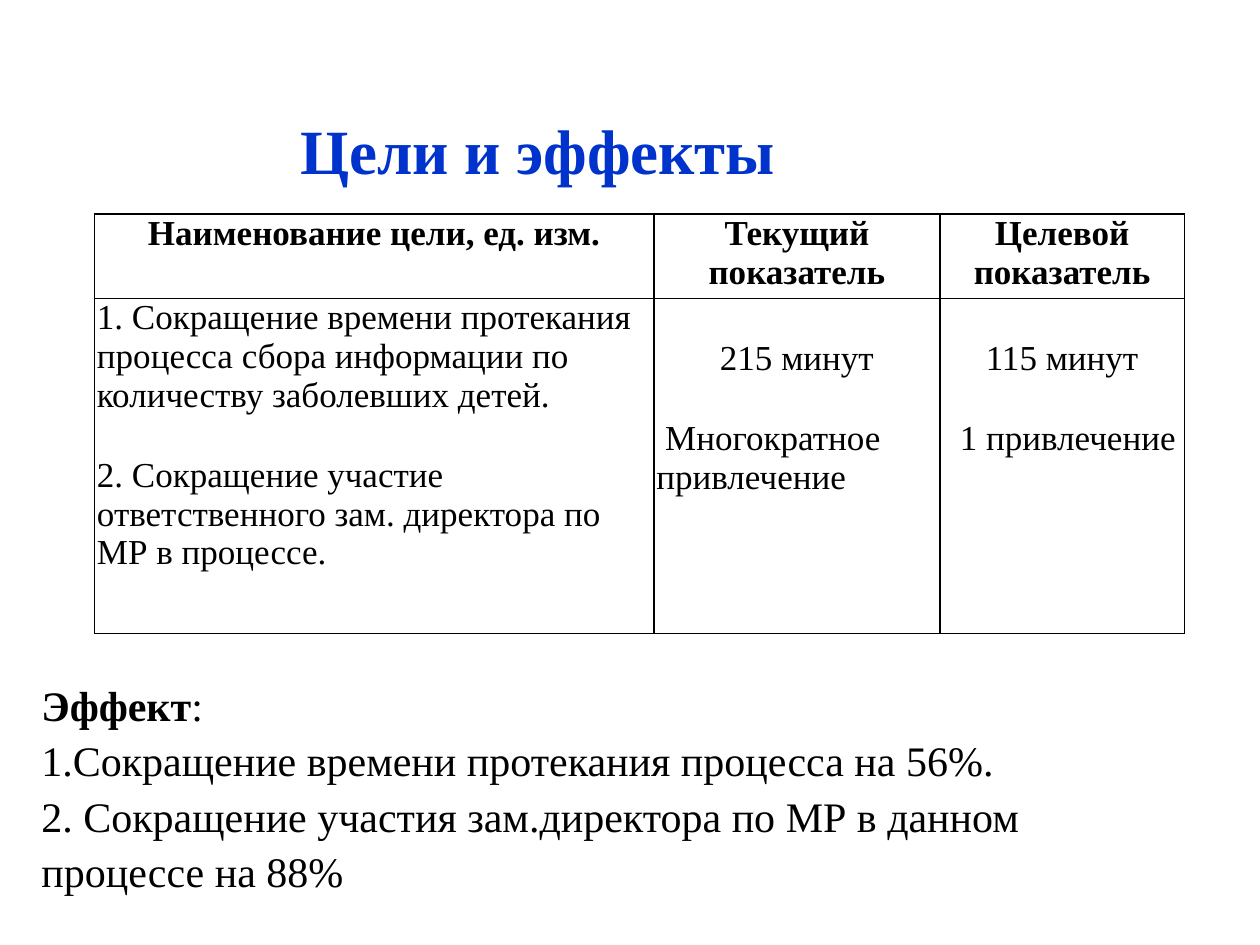
from dataclasses import dataclass

from lxml import etree
from pptx import Presentation
from pptx.dml.color import RGBColor
from pptx.enum.text import MSO_ANCHOR, MSO_AUTO_SIZE, PP_ALIGN
from pptx.oxml.ns import qn
from pptx.util import Inches, Pt

LEFT, CENTER = PP_ALIGN.LEFT, PP_ALIGN.CENTER
MIDDLE = MSO_ANCHOR.MIDDLE
BLACK = RGBColor(0x00, 0x00, 0x00)
BLUE = RGBColor(0x00, 0x33, 0xCC)
FONT = "Times New Roman"
TITLE_ONLY = 5
BLANK_LINE = 23.3  # points


@dataclass
class Line:
    text: str
    alignment: PP_ALIGN = CENTER
    bold: bool = False
    space_before: float = 0  # points
    indent: float = 0  # inches


@dataclass
class TableCell:
    lines: list[Line]
    top_margin: float = 0  # points


HEADER = [
    TableCell([Line("Наименование цели, ед. изм.", bold=True)]),
    TableCell([Line("Текущий показатель", bold=True)]),
    TableCell([Line("Целевой", bold=True), Line("показатель", bold=True)]),
]
GOALS = [
    TableCell([
        Line("1. Сокращение времени протекания процесса сбора информации "
             "по количеству заболевших детей.", LEFT),
        Line("2. Сокращение участие ответственного зам. директора по МР "
             "в процессе.", LEFT, space_before=BLANK_LINE),
    ]),
    TableCell([
        Line("215 минут"),
        Line("Многократное привлечение", LEFT, space_before=BLANK_LINE,
             indent=0.07),
    ], BLANK_LINE),
    TableCell([
        Line("115 минут"),
        Line("1 привлечение", space_before=BLANK_LINE, indent=0.09),
    ], BLANK_LINE),
]
COLUMN_WIDTHS = [4.44, 2.27, 1.94]
ROW_HEIGHTS = [0.67, 2.66]
EFFECTS = [
    Line("Эффект", LEFT, bold=True),
    Line("1.Сокращение времени протекания процесса на 56%.", LEFT),
    Line("2. Сокращение участия зам.директора по МР в данном", LEFT),
    Line("процессе на 88%", LEFT),
]


def format_font(font, size: float, color: RGBColor, bold: bool) -> None:
    font.name, font.size, font.bold = FONT, Pt(size), bold
    font.color.rgb = color


def write_lines(text_frame, lines: list[Line], size: float,
                color: RGBColor = BLACK) -> None:
    text_frame.text = "\n".join(line.text for line in lines)
    for paragraph, line in zip(text_frame.paragraphs, lines):
        paragraph.alignment = line.alignment
        if line.space_before:
            paragraph.space_before = Pt(line.space_before)
        if line.indent:
            properties = paragraph._p.get_or_add_pPr()
            properties.set("marL", "0")
            properties.set("indent", str(Inches(line.indent)))
        for run in paragraph.runs:
            format_font(run.font, size, color, line.bold)


def add_borders(cell) -> None:
    properties = cell._tc.get_or_add_tcPr()
    for position, side in enumerate(("a:lnL", "a:lnR", "a:lnT", "a:lnB")):
        border = etree.Element(qn(side), w=str(Pt(1)))
        fill = etree.SubElement(border, qn("a:solidFill"))
        etree.SubElement(fill, qn("a:srgbClr"), val=str(BLACK))
        properties.insert(position, border)


def add_goal_table(slide) -> None:
    rows = [HEADER, GOALS]
    table = slide.shapes.add_table(
        len(rows), len(COLUMN_WIDTHS), Inches(0.75), Inches(1.7),
        Inches(sum(COLUMN_WIDTHS)), Inches(sum(ROW_HEIGHTS))).table
    for column, width in zip(table.columns, COLUMN_WIDTHS):
        column.width = Inches(width)
    for table_row, height, contents in zip(table.rows, ROW_HEIGHTS, rows):
        table_row.height = Inches(height)
        for cell, content in zip(table_row.cells, contents):
            cell.margin_left = cell.margin_right = Inches(0.02)
            cell.margin_top, cell.margin_bottom = Pt(content.top_margin), 0
            cell.fill.background()
            add_borders(cell)
            write_lines(cell.text_frame, content.lines, 20)


def add_title(slide) -> None:
    title = slide.shapes.title
    title.left, title.top = Inches(1.66), Inches(0.83)
    title.width, title.height = Inches(5.22), Inches(0.71)
    title.text_frame.word_wrap = False
    title.text_frame.auto_size = MSO_AUTO_SIZE.SHAPE_TO_FIT_TEXT
    write_lines(title.text_frame, [Line("Цели и эффекты", bold=True)], 36, BLUE)


def add_effects(slide) -> None:
    text_frame = slide.shapes.add_textbox(
        Inches(0.23), Inches(5.37), Inches(9.3), Inches(1.72)).text_frame
    text_frame.word_wrap = True
    text_frame.vertical_anchor = MIDDLE
    write_lines(text_frame, EFFECTS, 24)
    for paragraph in text_frame.paragraphs:
        paragraph.line_spacing = 1.1
    colon = text_frame.paragraphs[0].add_run()
    colon.text = ":"
    format_font(colon.font, 24, BLACK, False)


def main() -> None:
    presentation = Presentation()
    presentation.slide_width, presentation.slide_height = Inches(10), Inches(7.5)
    slide = presentation.slides.add_slide(presentation.slide_layouts[TITLE_ONLY])
    add_title(slide)
    add_goal_table(slide)
    add_effects(slide)
    presentation.save("out.pptx")


if __name__ == "__main__":
    main()
